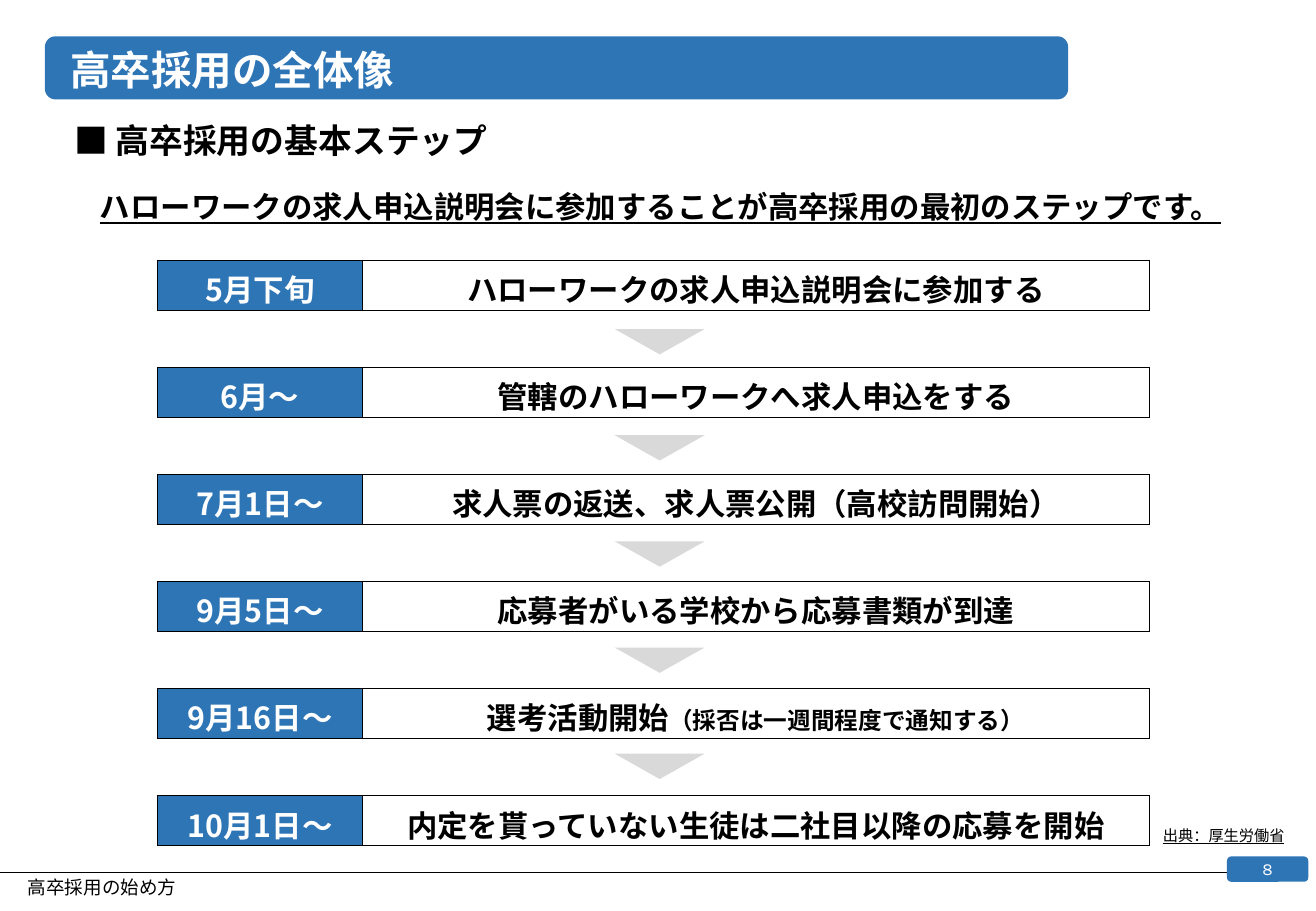
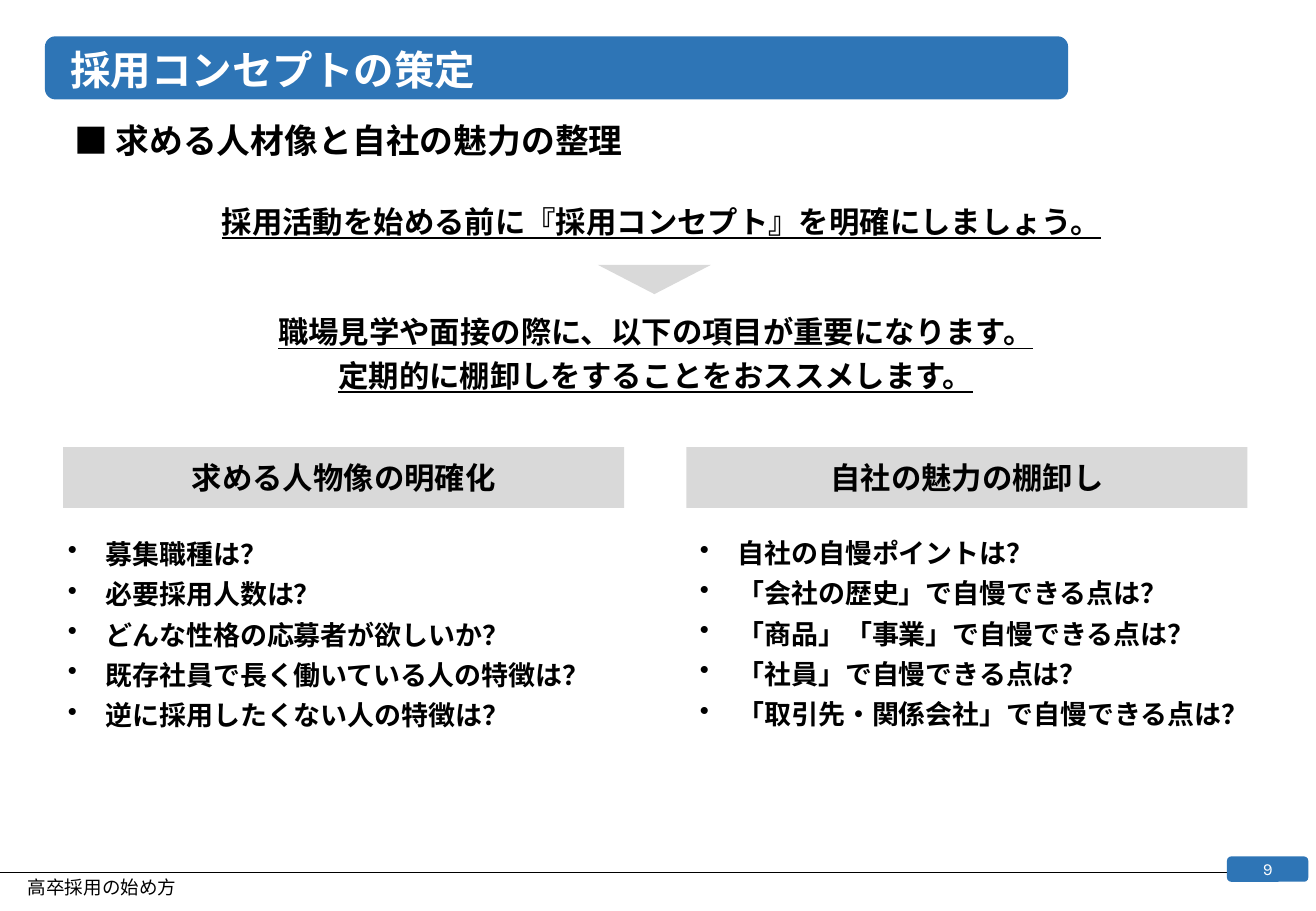
from dataclasses import dataclass

from lxml import etree
from pptx import Presentation
from pptx.dml.color import RGBColor
from pptx.enum import shapes, text
from pptx.oxml import ns
from pptx.util import Cm, Pt

BLUE = RGBColor(0x2E, 0x75, 0xB6)
GRAY = RGBColor(0xD9, 0xD9, 0xD9)
BLACK = RGBColor(0, 0, 0)
WHITE = RGBColor(0xFF, 0xFF, 0xFF)
FONT = "Noto Sans CJK JP"
NUMBER_FONT = "Karla"
LINE_SPACING = 0.8
PARAGRAPH_GAP = Pt(8.5)
LEFT, CENTER, RIGHT = text.PP_ALIGN.LEFT, text.PP_ALIGN.CENTER, text.PP_ALIGN.RIGHT
SHAPE = shapes.MSO_SHAPE


@dataclass(frozen=True)
class Box:
    """A rectangle in centimetres."""
    left: float
    top: float
    width: float
    height: float

    def lengths(self):
        return Cm(self.left), Cm(self.top), Cm(self.width), Cm(self.height)


@dataclass(frozen=True)
class Style:
    size: float
    color: RGBColor = BLACK
    bold: bool = True
    underline: bool = False
    align: text.PP_ALIGN = LEFT
    font: str = FONT


@dataclass(frozen=True)
class Step:
    date: str
    action: str
    note: str = ""


@dataclass(frozen=True)
class Topic:
    heading: str
    heading_box: Box
    list_box: Box
    questions: tuple[str, ...]


TITLE = Style(24, WHITE)
SUBTITLE = Style(20)
LEAD = Style(18, underline=True, align=CENTER)
LABEL = Style(18, align=CENTER)
DATE = Style(18, WHITE, align=CENTER)
QUESTION = Style(16)
FOOTER = Style(11, bold=False)
SOURCE = Style(9, bold=False, underline=True, align=RIGHT)
PAGE_NUMBER = Style(10, WHITE, bold=False, align=CENTER, font=NUMBER_FONT)

STEPS = (
    Step("5月下旬", "ハローワークの求人申込説明会に参加する"),
    Step("6月～", "管轄のハローワークへ求人申込をする"),
    Step("7月1日～", "求人票の返送、求人票公開（高校訪問開始）"),
    Step("9月5日～", "応募者がいる学校から応募書類が到達"),
    Step("9月16日～", "選考活動開始", "（採否は一週間程度で通知する）"),
    Step("10月1日～", "内定を貰っていない生徒は二社目以降の応募を開始"),
)
STEP_TOP, STEP_PITCH = 5.44, 2.24
ARROW_TOP, ARROW_PITCH = 6.88, 2.22

TOPICS = (
    Topic("求める人物像の明確化", Box(1.32, 9.35, 11.73, 1.27), Box(1.17, 11.25, 11.86, 5.03),
          ("募集職種は？", "必要採用人数は？", "どんな性格の応募者が欲しいか？",
           "既存社員で長く働いている人の特徴は？", "逆に採用したくない人の特徴は？")),
    Topic("自社の魅力の棚卸し", Box(14.35, 9.35, 11.73, 1.27), Box(14.38, 11.23, 12.55, 5.03),
          ("自社の自慢ポイントは？", "「会社の歴史」で自慢できる点は？",
           "「商品」「事業」で自慢できる点は？", "「社員」で自慢できる点は？",
           "「取引先・関係会社」で自慢できる点は？")),
)


def apply_style(paragraph, style: Style) -> None:
    paragraph.alignment = style.align
    font = paragraph.font
    font.name = style.font
    font.size = Pt(style.size)
    font.bold = style.bold
    font.underline = style.underline
    font.color.rgb = style.color
    defaults = paragraph._p.pPr.find(ns.qn("a:defRPr"))
    east_asian = etree.SubElement(defaults, ns.qn("a:ea"))
    east_asian.set("typeface", style.font)


def add_bullet(paragraph) -> None:
    properties = paragraph._p.get_or_add_pPr()
    properties.set("marL", str(Cm(0.79)))
    properties.set("indent", str(-Cm(0.79)))
    etree.SubElement(properties, ns.qn("a:buChar")).set("char", "•")


def add_text(slide, box: Box, lines: tuple[str, ...], style: Style,
             anchor=text.MSO_ANCHOR.TOP, bulleted: bool = False) -> None:
    frame = slide.shapes.add_textbox(*box.lengths()).text_frame
    frame.word_wrap = True
    frame.vertical_anchor = anchor
    for index, line in enumerate(lines):
        paragraph = frame.add_paragraph() if index else frame.paragraphs[0]
        paragraph.text = line
        if bulleted:
            add_bullet(paragraph)
        paragraph.line_spacing = LINE_SPACING
        if index:
            paragraph.space_before = PARAGRAPH_GAP
        apply_style(paragraph, style)


def add_block(slide, kind, box: Box, color: RGBColor, label: str = "", style: Style = LABEL):
    shape = slide.shapes.add_shape(kind, *box.lengths())
    shape.shadow.inherit = False
    shape.fill.solid()
    shape.fill.fore_color.rgb = color
    shape.line.fill.background()
    if label:
        frame = shape.text_frame
        frame.margin_top = frame.margin_bottom = 0
        frame.vertical_anchor = text.MSO_ANCHOR.MIDDLE
        frame.paragraphs[0].text = label
        apply_style(frame.paragraphs[0], style)
    return shape


def add_down_arrow(slide, box: Box) -> None:
    add_block(slide, SHAPE.ISOSCELES_TRIANGLE, box, GRAY).rotation = 180


def add_base_slide(presentation, title: str, subtitle: str, number: int):
    """Add a slide with the title band, subtitle and footer."""
    slide = presentation.slides.add_slide(presentation.slide_layouts[6])
    add_block(slide, SHAPE.ROUNDED_RECTANGLE, Box(0.94, 0.76, 21.39, 1.32), BLUE)
    rule = slide.shapes.add_connector(
        shapes.MSO_CONNECTOR.STRAIGHT, Cm(0), Cm(18.24), Cm(25.65), Cm(18.24))
    rule.line.color.rgb = BLACK
    rule.line.width = Pt(0.25)
    etree.SubElement(rule._element.spPr, ns.qn("a:effectLst"))
    add_block(slide, SHAPE.ROUNDED_RECTANGLE, Box(25.65, 17.91, 1.7, 0.53), BLUE,
              str(number), PAGE_NUMBER)
    add_text(slide, Box(1.22, 1.02, 20.22, 1.07), (title,), TITLE, text.MSO_ANCHOR.MIDDLE)
    add_text(slide, Box(1.3, 2.54, 18.97, 0.94), (subtitle,), SUBTITLE)
    add_text(slide, Box(0.33, 18.29, 9.19, 0.79), ("高卒採用の始め方",), FOOTER)
    return slide


def set_borders(cell) -> None:
    properties = cell._tc.get_or_add_tcPr()
    for index, side in enumerate(("lnL", "lnR", "lnT", "lnB")):
        border = etree.Element(ns.qn(f"a:{side}"), w=str(Pt(0.5)))
        fill = etree.SubElement(border, ns.qn("a:solidFill"))
        etree.SubElement(fill, ns.qn("a:srgbClr")).set("val", str(BLACK))
        properties.insert(index, border)


def add_step(slide, step: Step, top: float) -> None:
    box = Box(3.3, top, 20.73, 1.04)
    table = slide.shapes.add_table(1, 2, *box.lengths()).table
    table.first_row = table.horz_banding = False
    table.columns[0].width = Cm(4.27)
    table.columns[1].width = Cm(16.46)
    date_cell, action_cell = table.cell(0, 0), table.cell(0, 1)
    date_cell.fill.solid()
    date_cell.fill.fore_color.rgb = BLUE
    action_cell.fill.background()
    for cell, label, style in ((date_cell, step.date, DATE), (action_cell, step.action, LABEL)):
        cell.vertical_anchor = text.MSO_ANCHOR.MIDDLE
        paragraph = cell.text_frame.paragraphs[0]
        paragraph.text = label
        apply_style(paragraph, style)
        set_borders(cell)
    if step.note:
        note = action_cell.text_frame.paragraphs[0].add_run()
        note.text = step.note
        note.font.size = Pt(14)


def build_overview(presentation) -> None:
    slide = add_base_slide(presentation, "高卒採用の全体像", "■ 高卒採用の基本ステップ", 8)
    for index, step in enumerate(STEPS):
        add_step(slide, step, STEP_TOP + index * STEP_PITCH)
    for index in range(len(STEPS) - 1):
        add_down_arrow(slide, Box(12.85, ARROW_TOP + index * ARROW_PITCH, 1.88, 0.53))
    add_text(slide, Box(0.71, 3.96, 26.19, 0.94),
             ("ハローワークの求人申込説明会に参加することが高卒採用の最初のステップです。",), LEAD)
    add_text(slide, Box(21.11, 17.22, 5.99, 0.58), ("出典：厚生労働省",), SOURCE)


def build_concept(presentation) -> None:
    slide = add_base_slide(presentation, "採用コンセプトの策定",
                           "■ 求める人材像と自社の魅力の整理", 9)
    add_text(slide, Box(4.34, 4.27, 18.97, 0.94),
             ("採用活動を始める前に『採用コンセプト』を明確にしましょう。",), LEAD)
    add_down_arrow(slide, Box(12.5, 5.54, 2.36, 0.61))
    add_text(slide, Box(1.3, 6.58, 24.82, 0.94),
             ("職場見学や面接の際に、以下の項目が重要になります。",
              "定期的に棚卸しをすることをおススメします。"), LEAD)
    for topic in TOPICS:
        add_block(slide, SHAPE.RECTANGLE, topic.heading_box, GRAY, topic.heading)
        add_text(slide, topic.list_box, topic.questions, QUESTION, bulleted=True)


def main() -> None:
    presentation = Presentation()
    presentation.slide_width = Cm(27.51)
    presentation.slide_height = Cm(19.05)
    build_overview(presentation)
    build_concept(presentation)
    presentation.save("out.pptx")


if __name__ == "__main__":
    main()
